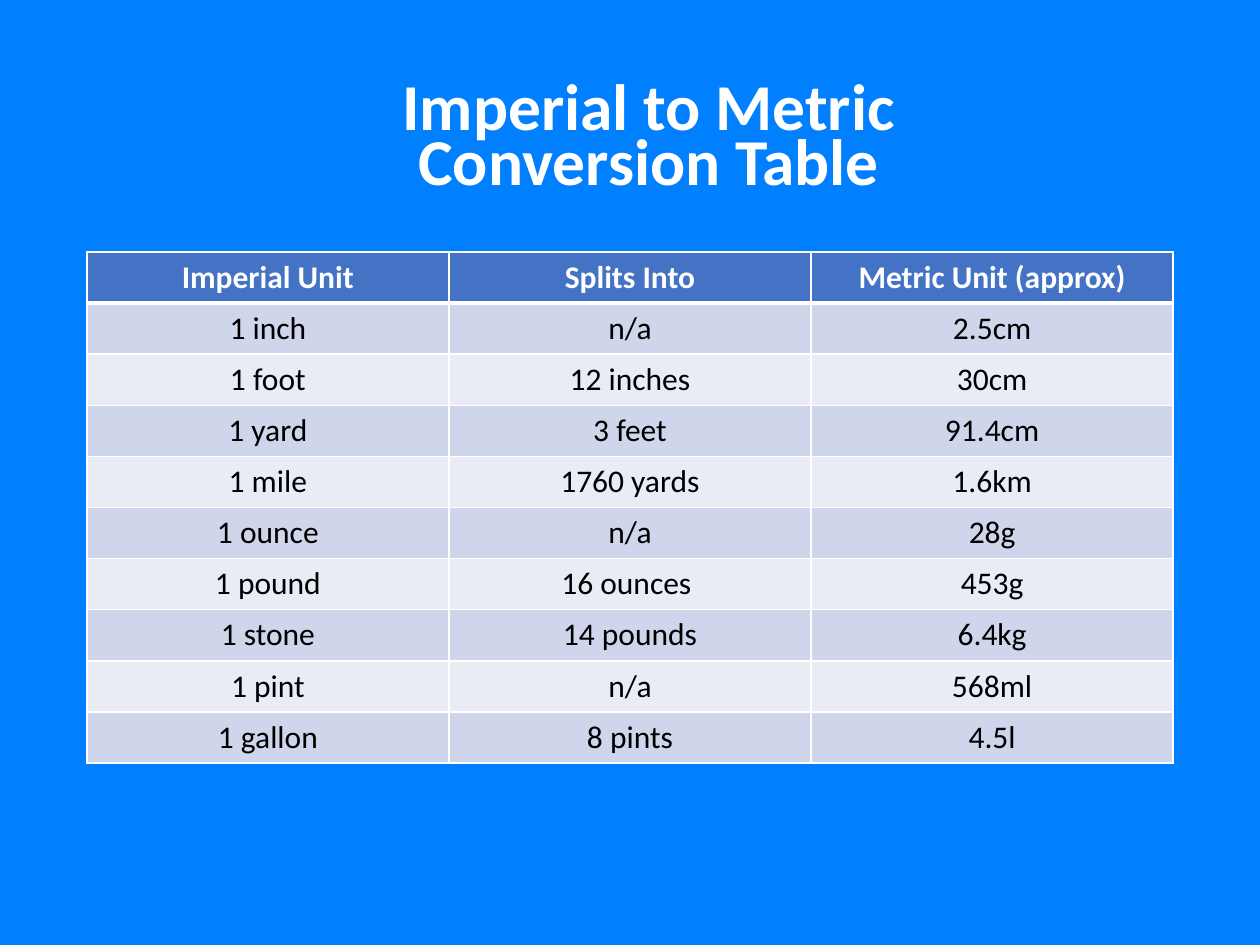
from lxml.etree import SubElement
from pptx import Presentation
from pptx.dml.color import RGBColor
from pptx.enum.text import MSO_ANCHOR, PP_ALIGN
from pptx.oxml.ns import qn
from pptx.util import Cm, Pt

TITLE_LINES = ["Imperial to Metric", "Conversion Table"]
ROWS = [
    ("Imperial Unit", "Splits Into", "Metric Unit (approx)"),
    ("1 inch", "n/a", "2.5cm"),
    ("1 foot", "12 inches", "30cm"),
    ("1 yard", "3 feet", "91.4cm"),
    ("1 mile", "1760 yards", "1.6km"),
    ("1 ounce", "n/a", "28g"),
    ("1 pound", "16 ounces ", "453g"),
    ("1 stone", "14 pounds", "6.4kg"),
    ("1 pint", "n/a", "568ml"),
    ("1 gallon", "8 pints", "4.5l"),
]

BACKGROUND = RGBColor(0x00, 0x7F, 0xFF)
WHITE = RGBColor(0xFF, 0xFF, 0xFF)
BLACK = RGBColor(0x00, 0x00, 0x00)
HEADER_FILL = RGBColor(0x44, 0x72, 0xC4)
BAND_FILLS = [RGBColor(0xE9, 0xEB, 0xF5), RGBColor(0xCF, 0xD5, 0xEA)]

FONT = "Calibri"
COLUMN_WIDTH = Cm(7.3)
ROW_HEIGHT = Cm(1.03)


def style_paragraph(paragraph, size, color, bold):
    paragraph.alignment = PP_ALIGN.CENTER
    font = paragraph.font
    font.name, font.size, font.bold = FONT, Pt(size), bold
    font.color.rgb = color


def set_borders(cell, widths):
    """Draw white cell borders; widths maps a:tcPr line tags to points."""
    properties = cell._tc.get_or_add_tcPr()
    for position, (tag, width) in enumerate(widths.items()):
        line = SubElement(properties, qn(f"a:{tag}"), w=str(Pt(width)))
        fill = SubElement(line, qn("a:solidFill"))
        SubElement(fill, qn("a:srgbClr"), val=str(WHITE))
        properties.insert(position, line)  # lines come before the cell fill


def add_title(slide):
    box = slide.shapes.add_textbox(Cm(4.5), Cm(0.36), Cm(17.17), Cm(3.86))
    frame = box.text_frame
    frame.word_wrap = True
    frame.vertical_anchor = MSO_ANCHOR.BOTTOM
    frame.margin_bottom = Cm(0.25)
    frame.text = "\n".join(TITLE_LINES)
    for paragraph in frame.paragraphs:
        style_paragraph(paragraph, 37.4, WHITE, True)
        paragraph.line_spacing = 0.7


def add_conversion_table(slide):
    column_count = len(ROWS[0])
    table = slide.shapes.add_table(
        len(ROWS), column_count, Cm(1.75), Cm(5.08),
        COLUMN_WIDTH * column_count, ROW_HEIGHT * len(ROWS),
    ).table
    for row_index, row in enumerate(ROWS):
        is_header = row_index == 0
        for column_index, text in enumerate(row):
            cell = table.cell(row_index, column_index)
            cell.text = text
            style_paragraph(cell.text_frame.paragraphs[0], 18,
                            WHITE if is_header else BLACK, is_header)
            cell.fill.solid()
            cell.fill.fore_color.rgb = HEADER_FILL if is_header else BAND_FILLS[row_index % 2]
            set_borders(cell, {
                "lnL": 1,
                "lnR": 1,
                "lnT": 3 if row_index == 1 else 1,
                "lnB": 3 if is_header else 1,
            })


presentation = Presentation()
presentation.slide_width, presentation.slide_height = Cm(25.4), Cm(19.05)
slide = presentation.slides.add_slide(presentation.slide_layouts[6])
slide.background.fill.solid()
slide.background.fill.fore_color.rgb = BACKGROUND
add_conversion_table(slide)
add_title(slide)
presentation.save("out.pptx")
